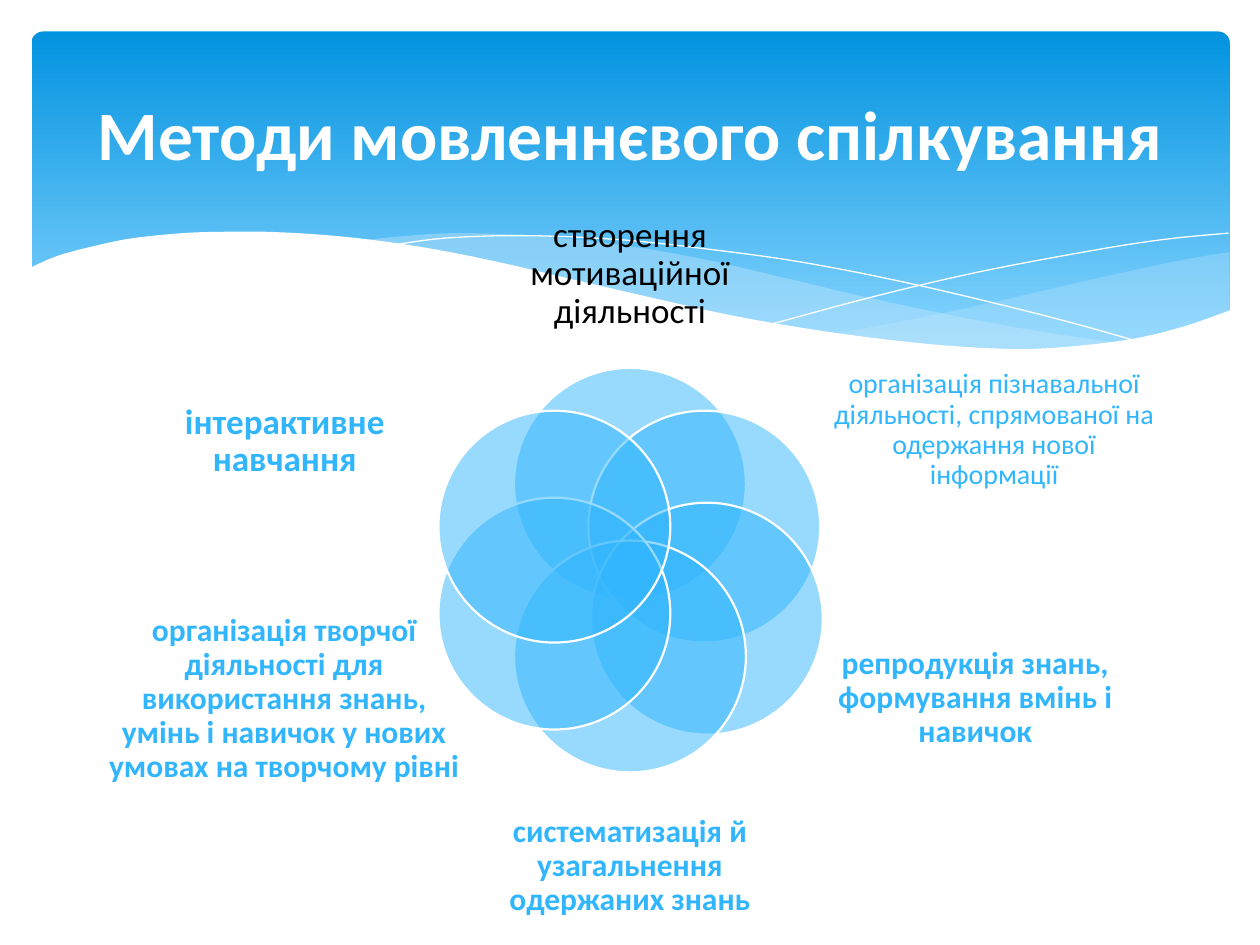
from lxml import etree
from pptx import Presentation
from pptx import util as u
from pptx.dml.color import RGBColor
from pptx.enum import shapes, text
from pptx.oxml.ns import qn


def colour(target, value):
    target.rgb = RGBColor.from_string(value)


def smooth(points, steps=6):
    padded = [points[0], *points, points[-1]]
    curve = [points[0]]
    for a, b, c, d in zip(padded, padded[1:], padded[2:], padded[3:]):
        for step in range(1, steps + 1):
            t = step / steps
            curve.append(tuple(
                0.5 * (2 * q + (r - p) * t + (2 * p - 5 * q + 4 * r - s) * t ** 2
                       + (3 * q - p - 3 * r + s) * t ** 3)
                for p, q, r, s in zip(a, b, c, d)))
    return curve


deck = Presentation()
deck.slide_width, deck.slide_height = u.Inches(10), u.Inches(7.5)
slide = deck.slides.add_slide(deck.slide_layouts[5])
translucent = []

banner = slide.shapes.add_shape(
    shapes.MSO_SHAPE.ROUNDED_RECTANGLE,
    u.Inches(0.25), u.Inches(0.25), u.Inches(9.51), u.Inches(2.7))
banner.adjustments[0] = 0.034
banner.shadow.inherit = False
banner.line.fill.background()
banner.fill.gradient()
banner.fill.gradient_angle = 270
for stop, position, value in zip(banner.fill.gradient_stops, (0, 0.9), ("0293E0", "83D3FE")):
    stop.position = position
    colour(stop.color, value)

right_wave = smooth([(9.76, 2), (9.35, 2.07), (8.61, 2.23), (7.79, 2.42), (7.06, 2.57), (6.61, 2.65)])
right_wave += smooth([(6.61, 2.65), (7.05, 2.71), (7.57, 2.76), (8.03, 2.78), (8.54, 2.76),
                      (8.97, 2.7), (9.35, 2.62), (9.76, 2.47)])
middle_wave = smooth([(8.93, 2.73), (8.07, 2.6), (7.06, 2.4), (6.29, 2.22), (5.55, 2.05),
                      (4.89, 1.94), (4.2, 1.87), (3.61, 1.85), (3.13, 1.88), (2.86, 1.91)])
middle_wave += smooth([(2.86, 1.91), (3.62, 2.03), (4.49, 2.22), (5.3, 2.4), (6.01, 2.55),
                       (6.65, 2.66), (7.22, 2.74), (7.73, 2.77), (8.18, 2.78), (8.57, 2.77), (8.93, 2.73)])
falling_line = smooth([(3.09, 1.95), (3.53, 1.89), (4.16, 1.87), (4.89, 1.9), (5.56, 1.97),
                       (6.36, 2.08), (7.27, 2.26), (8.31, 2.51), (9.07, 2.72)])
rising_line = smooth([(6.13, 2.57), (6.95, 2.35), (7.76, 2.16), (8.66, 1.99), (9.24, 1.9), (9.75, 1.85)])
white_wave = smooth([(9.77, 2.46), (9.4, 2.59), (8.99, 2.69), (8.5, 2.75), (8.09, 2.77), (7.61, 2.75),
                     (7.08, 2.7), (6.48, 2.62), (5.79, 2.5), (5.03, 2.33), (4.47, 2.2), (3.91, 2.07),
                     (3.4, 1.97), (2.92, 1.9), (2.5, 1.86), (2.11, 1.84), (1.77, 1.84), (1.46, 1.85),
                     (1.06, 1.89), (0.76, 1.95), (0.46, 2.03), (0.23, 2.13)])
white_wave += [(0.23, 3.29), (9.77, 3.29)]

for points, fill, opacity in (
    (right_wave, "C6E7FC", 29),
    (middle_wave, "C6E7FC", 40),
    (falling_line, None, 100),
    (rising_line, None, 100),
    (white_wave, "FFFFFF", 100),
):
    corners = [(u.Inches(x), u.Inches(y)) for x, y in points]
    builder = slide.shapes.build_freeform(*corners[0])
    builder.add_line_segments(corners[1:], close=fill is not None)
    wave = builder.convert_to_shape()
    wave.shadow.inherit = False
    if fill:
        wave.fill.solid()
        colour(wave.fill.fore_color, fill)
        wave.line.fill.background()
        translucent.append((wave, opacity))
    else:
        wave.fill.background()
        colour(wave.line.color, "FFFFFF")
        wave.line.width = u.Pt(0)

methods = [
    ((4.08, 2.92), (3.85, 1.55, 2.3, 1.25), "створення мотиваційної діяльності", 20, False, "000000"),
    ((4.67, 3.26), (6.57, 2.73, 2.64, 1.37),
     "організація пізнавальної діяльності, спрямованої на одержання нової інформації", 16, False, "31B6FD"),
    ((4.69, 3.99), (6.65, 4.78, 2.18, 1.53),
     "репродукція знань, формування вмінь і навичок", 18, True, "31B6FD"),
    ((4.08, 4.29), (3.85, 6.25, 2.3, 1.25),
     "систематизація й узагальнення одержаних знань", 18, True, "31B6FD"),
    ((3.48, 3.95), (0.86, 4.62, 2.79, 1.86),
     "організація творчої діяльності для використання знань, умінь і навичок у нових умовах на творчому рівні",
     18, True, "31B6FD"),
    ((3.48, 3.26), (1.17, 2.74, 2.18, 1.53), "інтерактивне навчання", 20, True, "31B6FD"),
]
for corner, area, wording, size, bold, value in methods:
    circle = slide.shapes.add_shape(
        shapes.MSO_SHAPE.OVAL, *map(u.Inches, corner), u.Inches(1.84), u.Inches(1.84))
    circle.shadow.inherit = False
    circle.fill.solid()
    colour(circle.fill.fore_color, "31B6FD")
    colour(circle.line.color, "FFFFFF")
    circle.line.width = u.Pt(1.25)
    translucent.append((circle, 50))

    frame = slide.shapes.add_textbox(*map(u.Inches, area)).text_frame
    frame.word_wrap = True
    frame.vertical_anchor = text.MSO_ANCHOR.MIDDLE
    frame.margin_left = frame.margin_right = frame.margin_top = frame.margin_bottom = 0
    para = frame.paragraphs[0]
    para.text = wording
    para.alignment = text.PP_ALIGN.CENTER
    para.line_spacing = 0.9
    para.font.name, para.font.size, para.font.bold = "Calibri", u.Pt(size), bold
    colour(para.font.color, value)

for shape, opacity in translucent:
    tint = shape.element.spPr.find(qn("a:solidFill")).find(qn("a:srgbClr"))
    if opacity < 100:
        etree.SubElement(tint, qn("a:alpha"), val=str(opacity * 1000))

title = slide.shapes.title
title.left, title.top, title.width, title.height = map(u.Inches, (0.5, 0.37, 9, 1.37))
title.text_frame.vertical_anchor = text.MSO_ANCHOR.MIDDLE
para = title.text_frame.paragraphs[0]
para.text = "Методи мовленнєвого спілкування"
para.alignment = text.PP_ALIGN.CENTER
para.font.name, para.font.size, para.font.bold = "Calibri", u.Pt(39.6), True
colour(para.font.color, "FFFFFF")
title.element.getparent().append(title.element)

deck.save("out.pptx")
